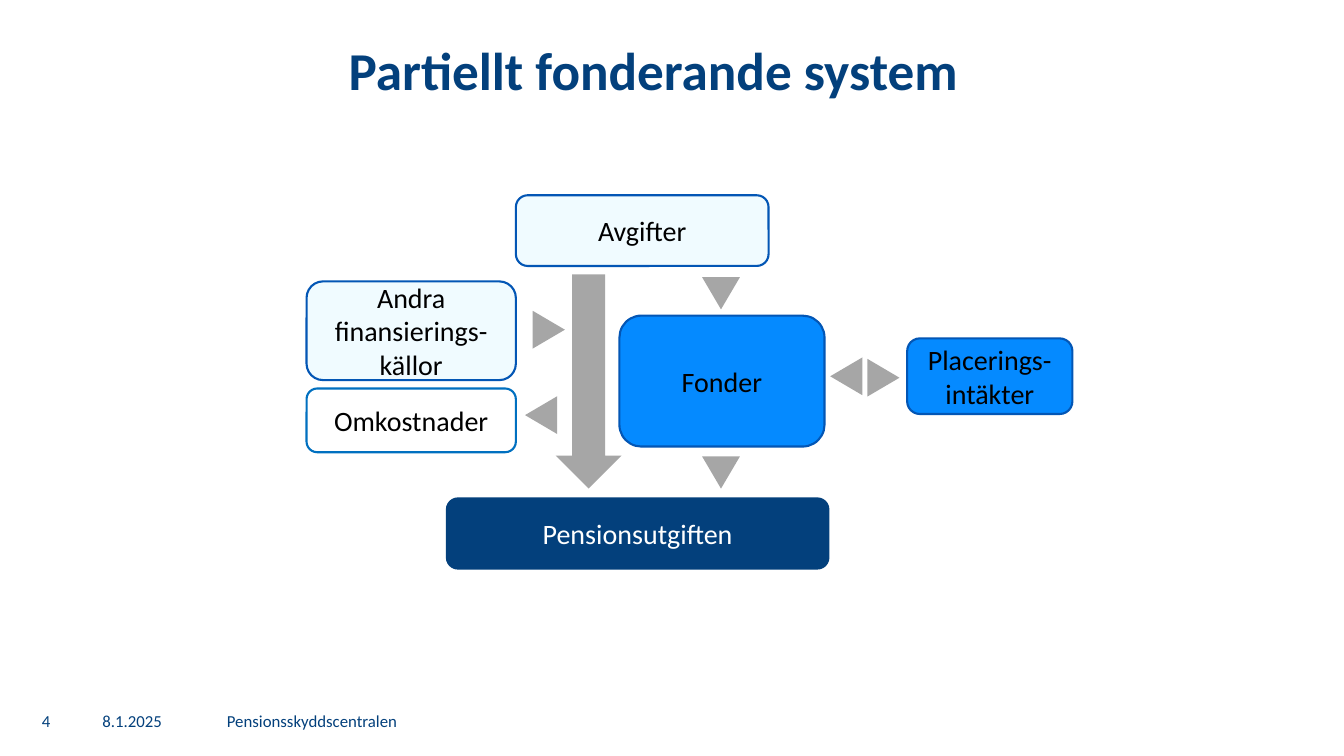
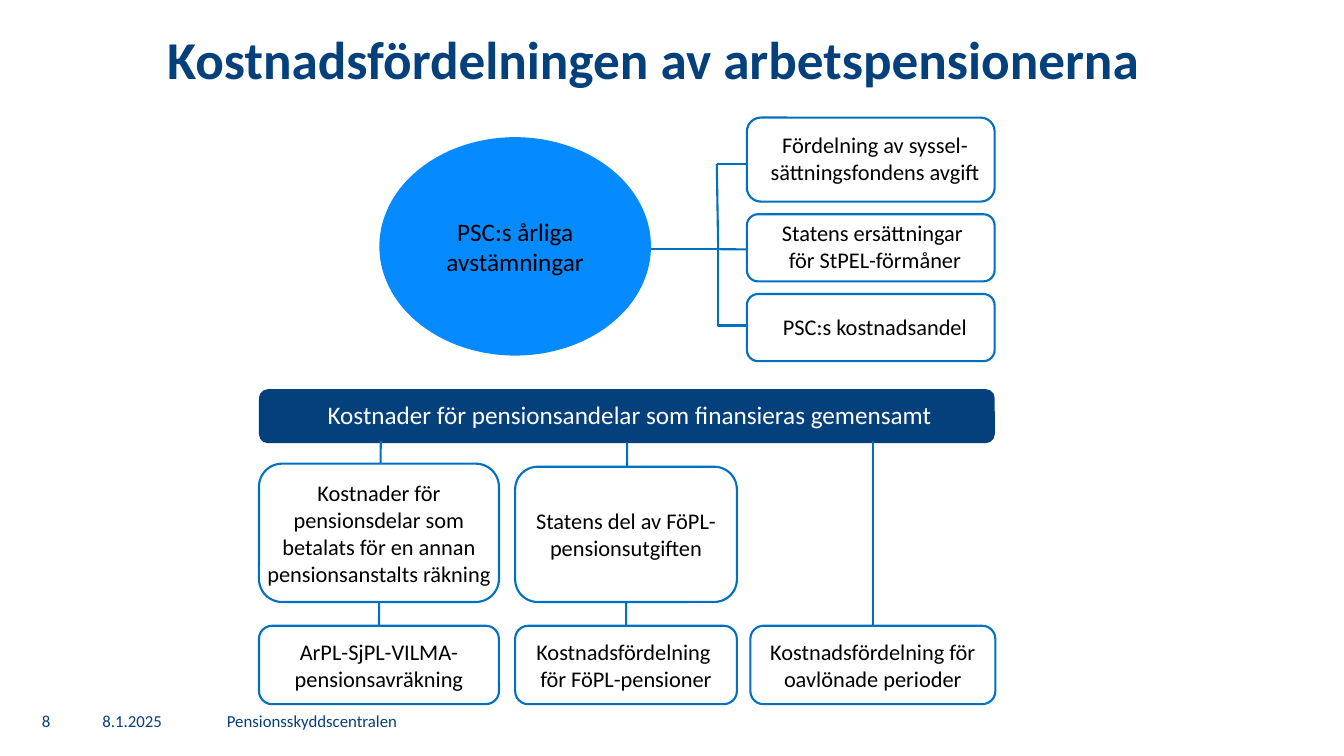
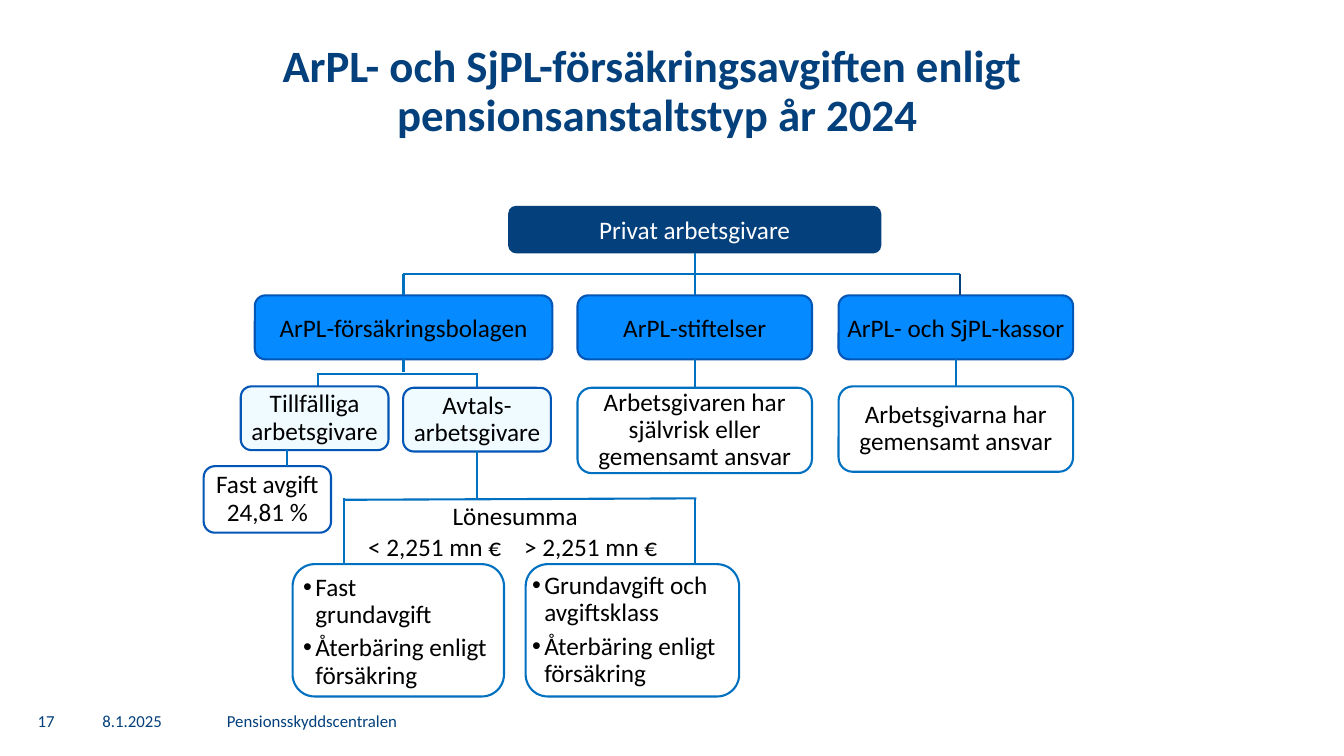
from lxml import etree
from pptx import Presentation
from pptx.dml.color import RGBColor
from pptx.enum.shapes import MSO_CONNECTOR, MSO_SHAPE
from pptx.enum.text import MSO_ANCHOR, MSO_AUTO_SIZE, PP_ALIGN
from pptx.oxml.ns import qn
from pptx.util import Pt

NAVY = RGBColor(0x03, 0x40, 0x7C)
BRIGHT = RGBColor(0x05, 0x8A, 0xFF)
ROYAL = RGBColor(0x03, 0x56, 0xB5)
BLUE = RGBColor(0x00, 0x70, 0xC0)
PALE = RGBColor(0xF0, 0xFB, 0xFF)
GREY = RGBColor(0xA6, 0xA6, 0xA6)
WHITE = RGBColor(0xFF, 0xFF, 0xFF)
BLACK = RGBColor(0x00, 0x00, 0x00)

ROUNDED = MSO_SHAPE.ROUNDED_RECTANGLE
ELLIPSE = MSO_SHAPE.OVAL
DOWN_ARROW = MSO_SHAPE.DOWN_ARROW
TRIANGLE = MSO_SHAPE.FLOWCHART_MERGE
STRAIGHT, ELBOW = MSO_CONNECTOR.STRAIGHT, MSO_CONNECTOR.ELBOW
TOP, MIDDLE = MSO_ANCHOR.TOP, MSO_ANCHOR.MIDDLE
LEFT, CENTER = PP_ALIGN.LEFT, PP_ALIGN.CENTER
TOP_SIDE, BOTTOM_SIDE = 0, 2

# Looks: fill and outline
PALE_BOX = (PALE, ROYAL)
BRIGHT_BOX = (BRIGHT, ROYAL)
WHITE_BOX = (WHITE, BLUE)
ROYAL_BOX = (WHITE, ROYAL)
NAVY_BOX = (NAVY, None)
BRIGHT_PLAIN = (BRIGHT, None)
GREY_PLAIN = (GREY, None)

WIDE_INSETS = (7.2, 3.6, 7.2, 3.6)
SLIM_INSETS = (3, 3.6, 3, 3.6)
NO_INSETS = (0, 0, 0, 0)


def add_box(page, place, text="", look=None, size=18, ink=BLACK, kind=ROUNDED,
            insets=WIDE_INSETS, align=CENTER, spacing=1.0, bullets=False):
    """Add a shape, or a plain text box when there is no look."""
    place = [Pt(value) for value in place]
    if look:
        box = page.shapes.add_shape(kind, *place)
        box.shadow.inherit = False
        fill, outline = look
        box.fill.solid()
        box.fill.fore_color.rgb = fill
        if outline:
            box.line.color.rgb = outline
            box.line.width = Pt(1.5)
        else:
            box.line.fill.background()
    else:
        box = page.shapes.add_textbox(*place)
    frame = box.text_frame
    frame.word_wrap = True
    frame.vertical_anchor = MIDDLE
    for side, inset in zip(("left", "top", "right", "bottom"), insets):
        setattr(frame, f"margin_{side}", Pt(inset))
    frame.text = text
    for number, para in enumerate(frame.paragraphs):
        if bullets:
            properties = para._p.get_or_add_pPr()
            properties.set("marL", str(Pt(8.7)))
            properties.set("indent", str(-Pt(8.7)))
            etree.SubElement(properties, qn("a:buFont")).set("typeface", "Arial")
            etree.SubElement(properties, qn("a:buChar")).set("char", "•")
            if number:
                para.space_before = Pt(4.3)
        para.alignment = align
        para.line_spacing = spacing
        for name, value in {"name": "Calibri", "size": Pt(size)}.items():
            setattr(para.font, name, value)
        para.font.color.rgb = ink
    return box


def add_line(page, start, end, source=None, target=None, color=BLUE, width=1.5,
             kind=STRAIGHT):
    """Add a line; source and target are (shape, side) pairs to join."""
    line = page.shapes.add_connector(kind, *[Pt(value) for value in (*start, *end)])
    if source:
        line.begin_connect(*source)
    if target:
        line.end_connect(*target)
    line.line.color.rgb = color
    line.line.width = Pt(width)
    etree.SubElement(line._element.spPr, qn("a:effectLst"))


deck = Presentation()
deck.slide_width, deck.slide_height = Pt(960), Pt(540)
title_only = deck.slide_layouts[5]

# Titles and footers of all slides
titles = [
    ("4", "Partiellt fonderande system", 38, (0, 28, 933.6, 66)),
    ("8", "Kostnadsfördelningen av arbetspensionerna", 38, (0, 20, 933.6, 60)),
    ("17", "ArPL- och SjPL-försäkringsavgiften enligt \vpensionsanstaltstyp år 2024", 32,
     (2.6, 28, 934, 105)),
]
pages = []
for number, heading, size, place in titles:
    page = deck.slides.add_slide(title_only)
    pages.append(page)
    title = page.shapes.title
    for name, value in zip(("left", "top", "width", "height"), place):
        setattr(title, name, Pt(value))
    frame = title.text_frame
    frame.text = heading
    for name, value in {"auto_size": MSO_AUTO_SIZE.NONE, "word_wrap": True,
                        "vertical_anchor": TOP}.items():
        setattr(frame, name, value)
    para = frame.paragraphs[0]
    para.alignment = CENTER
    para.line_spacing = 0.9
    for name, value in {"name": "Calibri", "size": Pt(size), "bold": True}.items():
        setattr(para.font, name, value)
    para.font.color.rgb = NAVY
    for text, left, width, align in [(number, 14.5, 37, CENTER), ("8.1.2025", 66, 82, LEFT),
                                     ("Pensionsskyddscentralen", 155, 739, LEFT)]:
        add_box(page, (left, 500, width, 29), text, size=12, ink=NAVY, align=align)
funding, costs, contributions = pages

# Funding: boxes
for text, place, look, ink in [
    ("Avgifter", (368.5, 139.5, 180.5, 50.5), PALE_BOX, BLACK),
    ("Andra finansierings-källor", (219, 201, 149.5, 70.5), PALE_BOX, BLACK),
    ("Omkostnader", (219, 277.5, 149.5, 45.5), WHITE_BOX, BLACK),
    ("Fonder", (442.5, 225.5, 146.5, 93.5), BRIGHT_BOX, BLACK),
    ("Placerings-intäkter", (648, 241.7, 118, 54), BRIGHT_BOX, BLACK),
    ("Pensionsutgiften", (318.5, 355.3, 274, 51.6), NAVY_BOX, WHITE),
]:
    add_box(funding, place, text, look, size=20, ink=ink)

# Funding: flow arrows
add_box(funding, (397, 196, 47, 153), look=GREY_PLAIN, kind=DOWN_ARROW)
for left, top, turn in [(501.5, 198, 0), (501.5, 326, 0), (378.5, 224, 270),
                        (373, 285, 90), (617.5, 258.3, 270), (591, 257.3, 90)]:
    triangle = add_box(funding, (left, top, 27, 23), look=GREY_PLAIN, kind=TRIANGLE)
    triangle.rotation = turn

# Costs: lines from the yearly settlements to their three branches
trunk = (513, 178)
add_line(costs, trunk, (512, 117))
add_line(costs, (450, 178), (576, 232.5), kind=ELBOW)
add_line(costs, trunk, (590, 178.5))
add_line(costs, (512, 117), (590, 117))

# Costs: yearly settlements and branches
add_box(costs, (271, 98, 194, 156), "PSC:s årliga avstämningar", BRIGHT_PLAIN, kind=ELLIPSE)
for text, top, height in [
    ("Fördelning av syssel-sättningsfondens avgift", 84, 60),
    ("Statens ersättningar \vför StPEL-förmåner", 153, 48),
    ("PSC:s kostnadsandel", 210, 48),
]:
    add_box(costs, (533.5, top, 177, height), text, WHITE_BOX, size=16, insets=(6, 0, 0, 2))

# Costs: shared costs and their three columns
add_box(costs, (185, 278, 525.6, 38.6),
        "Kostnader för pensionsandelar som finansieras gemensamt",
        NAVY_BOX, ink=WHITE, insets=(11, 0, 7, 2))
for left, width, start, upper_top, upper_text, lower_text in [
    (185, 171.4, (272, 315), 331.2,
     "Kostnader för pensionsdelar som betalats för en annan pensionsanstalts räkning",
     "ArPL-SjPL-VILMA-pensionsavräkning"),
    (368, 158.4, (448, 316), 333.4, "Statens del av FöPL-pensionsutgiften",
     "Kostnadsfördelning \vför FöPL-pensioner"),
    (536, 175, (623.5, 315), None, None, "Kostnadsfördelning för oavlönade perioder"),
]:
    lower = add_box(costs, (left, 447, width, 56), lower_text, WHITE_BOX, size=16,
                    insets=NO_INSETS)
    add_line(costs, start, (left + width / 2, 447), target=(lower, TOP_SIDE))
    if upper_text:
        add_box(costs, (left, upper_top, width, 430 - upper_top), upper_text,
                WHITE_BOX, size=16, insets=NO_INSETS)

# Contributions: employer and the three kinds of pension provider
employer = add_box(contributions, (363, 147, 266.5, 34), "Privat arbetsgivare", NAVY_BOX,
                   ink=WHITE)
add_line(contributions, (288, 196), (685.5, 196))
providers = []
for text, left, width, line_x, start_y, source, color, line_width in [
    ("ArPL-försäkringsbolagen", 182, 212.5, 288.25, 196, None, BLUE, 1.5),
    ("ArPL-stiftelser", 412.5, 167.5, 496.25, 181, (employer, BOTTOM_SIDE), BLUE, 1.5),
    ("ArPL- och SjPL-kassor", 599, 167.5, 685.5, 196, None, NAVY, 1.25),
]:
    provider = add_box(contributions, (left, 211, width, 45.7), text, BRIGHT_BOX,
                       insets=SLIM_INSETS)
    providers.append(provider)
    target = (provider, TOP_SIDE) if line_x == left + width / 2 else None
    add_line(contributions, (line_x, start_y), (line_x, 211), source, target,
             color, line_width)
company, foundation, fund = providers

# Contributions: liability under foundations and funds
for provider, text, left, top in [
    (foundation, "Arbetsgivaren har självrisk eller gemensamt ansvar", 412.5, 277),
    (fund, "Arbetsgivarna har gemensamt ansvar", 599, 276),
]:
    liability = add_box(contributions, (left, top, 167.5, 61), text, WHITE_BOX, spacing=0.9)
    middle = left + 167.5 / 2
    add_line(contributions, (middle, 256.7), (middle, top),
             (provider, BOTTOM_SIDE), (liability, TOP_SIDE))

# Contributions: employer types under the insurance companies
add_line(contributions, (288.25, 256.7), (288.25, 266), source=(company, BOTTOM_SIDE))
add_line(contributions, (227, 267), (341, 267))
for text, left, top, line_x in [("Tillfälliga\varbetsgivare", 172, 276, 227),
                                ("Avtals-\varbetsgivare", 288, 277, 341)]:
    add_line(contributions, (line_x, 266.5), (line_x, top))
    add_box(contributions, (left, top, 105.5, 45.5), text, PALE_BOX,
            insets=SLIM_INSETS, spacing=0.9)
add_box(contributions, (145.5, 333, 91, 47.5), "Fast avgift\v24,81 %", ROYAL_BOX,
        insets=SLIM_INSETS, spacing=0.9)
add_line(contributions, (205, 321), (205, 333))

# Contributions: split by payroll
add_line(contributions, (341, 322), (341, 357))
add_line(contributions, (245.5, 357), (497.5, 356))
for x in (245.5, 496.5):
    add_line(contributions, (x, 356), (x, 403))
for text, middle, top in [("Lönesumma", 368, 357.5), ("< 2,251 mn €", 310.5, 379),
                          ("> 2,251 mn €", 422, 379)]:
    add_box(contributions, (middle - 55, top, 110, 22), text, insets=NO_INSETS)
for text, left, width, insets in [
    ("Fast\vgrundavgift\nÅterbäring enligt försäkring", 209, 151, (3, 2.5, 3, 0)),
    ("Grundavgift och avgiftsklass\nÅterbäring enligt försäkring", 375.5, 152.5, NO_INSETS),
]:
    add_box(contributions, (left, 403, width, 94.5), text, WHITE_BOX, insets=insets,
            align=LEFT, spacing=0.9, bullets=True)

deck.save("out.pptx")
